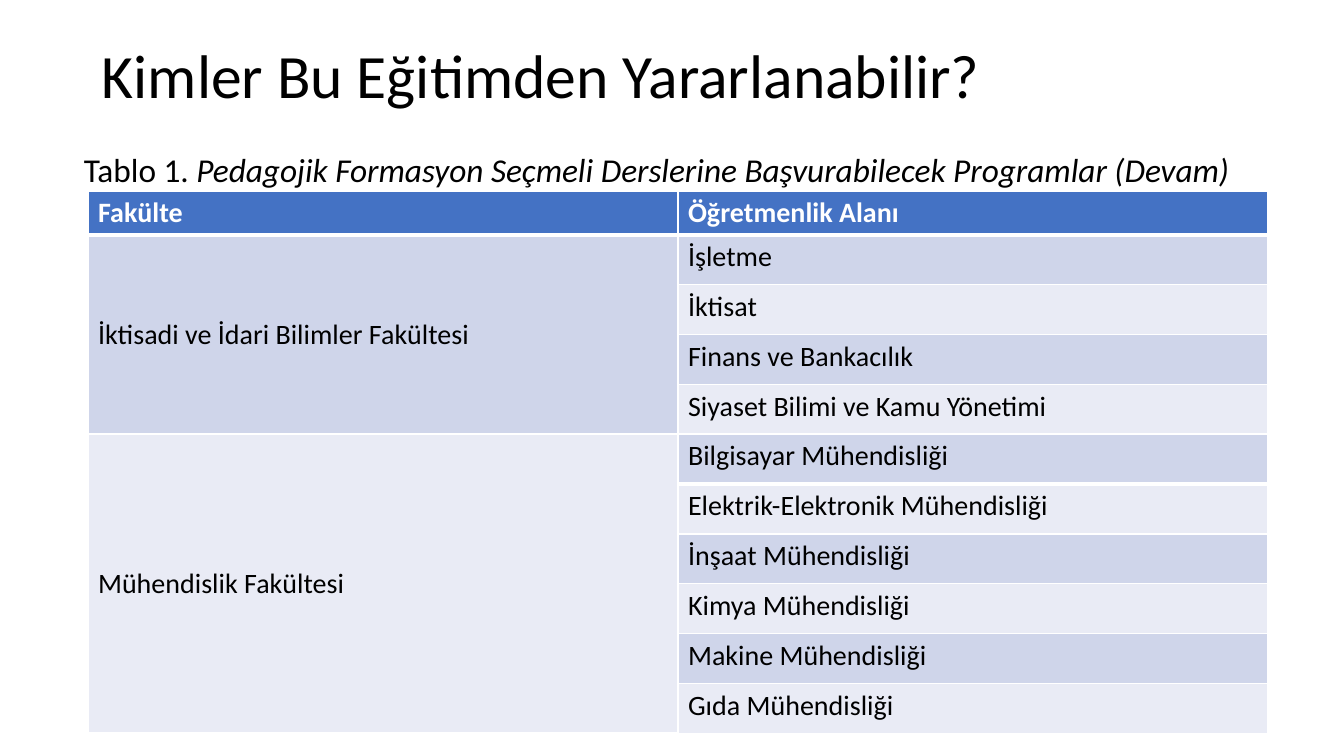
from lxml.etree import SubElement
from pptx import Presentation
from pptx.dml.color import RGBColor
from pptx.enum.text import MSO_ANCHOR as ANCHOR
from pptx.oxml.ns import qn
from pptx.util import Pt

PX = 12192000 / 1344
BLACK, WHITE = "000000", "FFFFFF"
HEADER, DARK, LIGHT = "4472C4", "CFD5EA", "E9EBF5"
COL_W, ROW_H, HEADER_H = 590, 50, 43
TABLE_X, TABLE_Y = 88, 191


def px(*lengths):
    return [round(n * PX) for n in lengths]


def write(tf, *runs, size=20, color=BLACK, bold=False, anchor=ANCHOR.TOP, spacing=None, before=None):
    """Fill the first paragraph with (text, italic) runs."""
    tf.word_wrap = True
    tf.vertical_anchor = anchor
    p = tf.paragraphs[0]
    p.line_spacing = spacing
    if before:
        p.space_before = Pt(before)
    for text, italic in runs:
        r = p.add_run()
        r.text = text
        f = r.font
        f.name, f.size, f.bold, f.italic = "Calibri", Pt(size), bold, italic
        f.color.rgb = RGBColor.from_string(color)


prs = Presentation()
prs.slide_width, prs.slide_height = px(1344, 756)
s = prs.slides.add_slide(prs.slide_layouts[6])

title = s.shapes.add_textbox(*px(92, 26, 1159, 106))
write(title.text_frame, ("Kimler Bu Eğitimden Yararlanabilir?", False),
      size=44, anchor=ANCHOR.MIDDLE, spacing=0.9)

caption = s.shapes.add_textbox(*px(74, 152, 1270, 73))
write(caption.text_frame, ("Tablo 1. ", False),
      ("Pedagojik Formasyon Seçmeli Derslerine Başvurabilecek Programlar (Devam)", True),
      size=23.8, spacing=0.8, before=10)

# Each table: header row (or None), faculty, faculty fill, programmes
tables = [
    (("Fakülte", "Öğretmenlik Alanı"), "İktisadi ve İdari Bilimler Fakültesi", DARK,
     ["İşletme", "İktisat", "Finans ve Bankacılık", "Siyaset Bilimi ve Kamu Yönetimi"]),
    (None, "Mühendislik Fakültesi", LIGHT,
     ["Bilgisayar Mühendisliği", "Elektrik-Elektronik Mühendisliği", "İnşaat Mühendisliği",
      "Kimya Mühendisliği", "Makine Mühendisliği", "Gıda Mühendisliği"]),
]

y = TABLE_Y
for header, faculty, faculty_fill, programmes in tables:
    rows = [(faculty if i == 0 else "", name) for i, name in enumerate(programmes)]
    fills = [(faculty_fill, (DARK, LIGHT)[i % 2]) for i in range(len(programmes))]
    heights = [ROW_H] * len(programmes)
    first = 0
    if header:
        rows.insert(0, header)
        fills.insert(0, (HEADER, HEADER))
        heights.insert(0, HEADER_H)
        first = 1

    frame = s.shapes.add_table(len(rows), 2, *px(TABLE_X, y, 2 * COL_W, sum(heights)))
    table = frame.table
    for column in table.columns:
        column.width = px(COL_W)[0]
    for i, height in enumerate(heights):
        table.rows[i].height = px(height)[0]
        for j in range(2):
            cell = table.cell(i, j)
            is_header = i < first
            if rows[i][j]:
                middle = j == 0 and not is_header
                write(cell.text_frame, (rows[i][j], False), bold=is_header,
                      color=WHITE if is_header else BLACK)
                cell.vertical_anchor = ANCHOR.MIDDLE if middle else ANCHOR.TOP
            tc_pr = cell._tc.get_or_add_tcPr()
            for side in ("lnL", "lnR", "lnT", "lnB"):
                thick = i == 0 and side == "lnB" or i == 1 and side == "lnT"
                ln = SubElement(tc_pr, qn("a:" + side), w=str(Pt(3 if thick else 1)))
                SubElement(SubElement(ln, qn("a:solidFill")), qn("a:srgbClr"), val=WHITE)
            cell.fill.solid()
            cell.fill.fore_color.rgb = RGBColor.from_string(fills[i][j])
    table.cell(first, 0).merge(table.cell(len(rows) - 1, 0))
    y += sum(heights)

prs.save("out.pptx")
